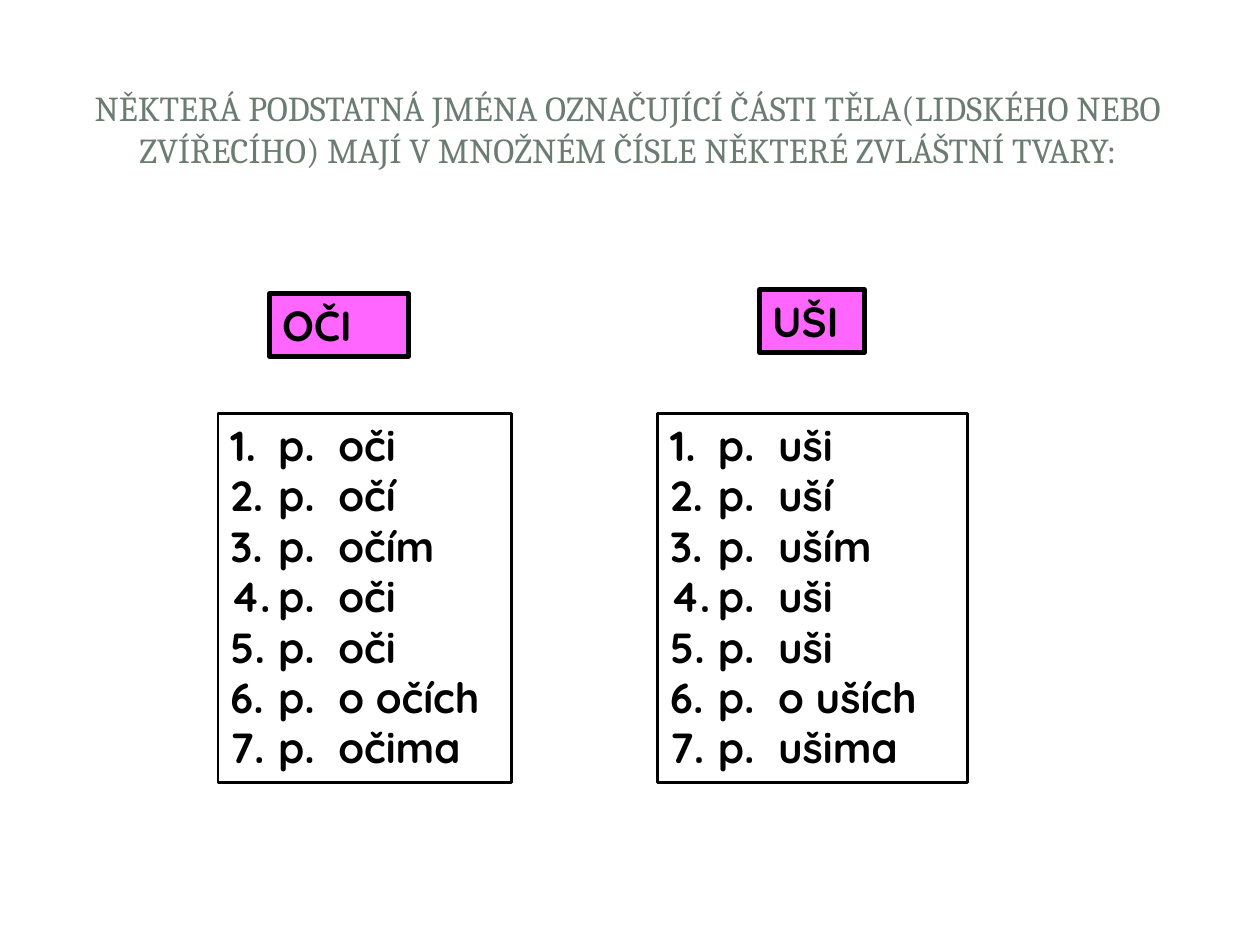
from dataclasses import dataclass

from lxml import etree
from pptx import Presentation
from pptx import util as u
from pptx.dml.color import RGBColor
from pptx.enum import shapes, text
from pptx.oxml.ns import qn


@dataclass(frozen=True)
class Theme:
    title_font: str = "Cambria"
    body_font: str = "Quicksand"
    title_size: int = 20
    body_size: int = 24
    title_color: str = "6B7D72"
    ink: str = "000000"
    label_fill: str = "FF66FF"
    label_line: float = 3
    list_line: float = 1.5
    list_indent: float = 0.38


class SlideBuilder:
    def __init__(self, slide, theme):
        self.slide = slide
        self.theme = theme

    def format_runs(self, frame, font, size, color, bold=False):
        for paragraph in frame.paragraphs:
            for run in paragraph.runs:
                run.font.name = font
                run.font.size = u.Pt(size)
                run.font.bold = bold
                run.font.color.rgb = RGBColor.from_string(color)

    def title(self, wording, left, top, width, height):
        box = self.slide.shapes.add_textbox(*map(u.Inches, (left, top, width, height)))
        frame = box.text_frame
        frame.word_wrap = True
        frame.vertical_anchor = text.MSO_ANCHOR.MIDDLE
        frame.text = wording
        frame.paragraphs[0].alignment = text.PP_ALIGN.CENTER
        self.format_runs(frame, self.theme.title_font, self.theme.title_size,
                         self.theme.title_color)

    def box(self, wording, left, top, width, height, line_width, fill=None):
        """Add an outlined rectangle with bold, left-aligned text."""
        shape = self.slide.shapes.add_shape(
            shapes.MSO_SHAPE.RECTANGLE, *map(u.Inches, (left, top, width, height)))
        shape.shadow.inherit = False
        if fill:
            shape.fill.solid()
            shape.fill.fore_color.rgb = RGBColor.from_string(fill)
        else:
            shape.fill.background()
        shape.line.color.rgb = RGBColor.from_string(self.theme.ink)
        shape.line.width = u.Pt(line_width)
        frame = shape.text_frame
        frame.word_wrap = True
        frame.auto_size = text.MSO_AUTO_SIZE.SHAPE_TO_FIT_TEXT
        frame.vertical_anchor = text.MSO_ANCHOR.TOP
        frame.text = wording
        for paragraph in frame.paragraphs:
            paragraph.alignment = text.PP_ALIGN.LEFT
        self.format_runs(frame, self.theme.body_font, self.theme.body_size,
                         self.theme.ink, bold=True)
        return shape

    def label(self, wording, left, top, width, height):
        self.box(wording, left, top, width, height,
                 self.theme.label_line, self.theme.label_fill)

    def case_list(self, forms, left, top, width, height):
        """Add a numbered list with one grammatical case per line."""
        wording = "\n".join(f"p.  {form}" for form in forms)
        shape = self.box(wording, left, top, width, height, self.theme.list_line)
        indent = u.Inches(self.theme.list_indent)
        for paragraph in shape.text_frame.paragraphs:
            properties = paragraph._p.get_or_add_pPr()
            properties.set("marL", str(indent))
            properties.set("indent", str(-indent))
            etree.SubElement(properties, qn("a:buFont"), typeface="+mj-lt")
            etree.SubElement(properties, qn("a:buAutoNum"), type="arabicPeriod")


def main():
    presentation = Presentation()
    presentation.slide_width = u.Inches(10)
    presentation.slide_height = u.Inches(7.5)
    slide = presentation.slides.add_slide(presentation.slide_layouts[6])
    builder = SlideBuilder(slide, Theme())

    builder.title(
        "NĚKTERÁ PODSTATNÁ JMÉNA OZNAČUJÍCÍ ČÁSTI TĚLA(LIDSKÉHO NEBO ZVÍŘECÍHO) "
        "MAJÍ V MNOŽNÉM ČÍSLE NĚKTERÉ ZVLÁŠTNÍ TVARY:",
        0.47, 0.45, 9.03, 1.14)
    builder.label("OČI", 2.14, 2.33, 1.1, 0.5)
    builder.label("UŠI", 6.03, 2.3, 0.83, 0.5)

    list_top, list_height = 3.28, 2.93
    eye_forms = ["oči", "očí", "očím", "oči", "oči", "o očích", "očima"]
    ear_forms = ["uši", "uší", "uším", "uši", "uši", "o uších", "ušima"]
    builder.case_list(eye_forms, 1.73, list_top, 2.33, list_height)
    builder.case_list(ear_forms, 5.22, list_top, 2.46, list_height)

    presentation.save("out.pptx")


if __name__ == "__main__":
    main()
